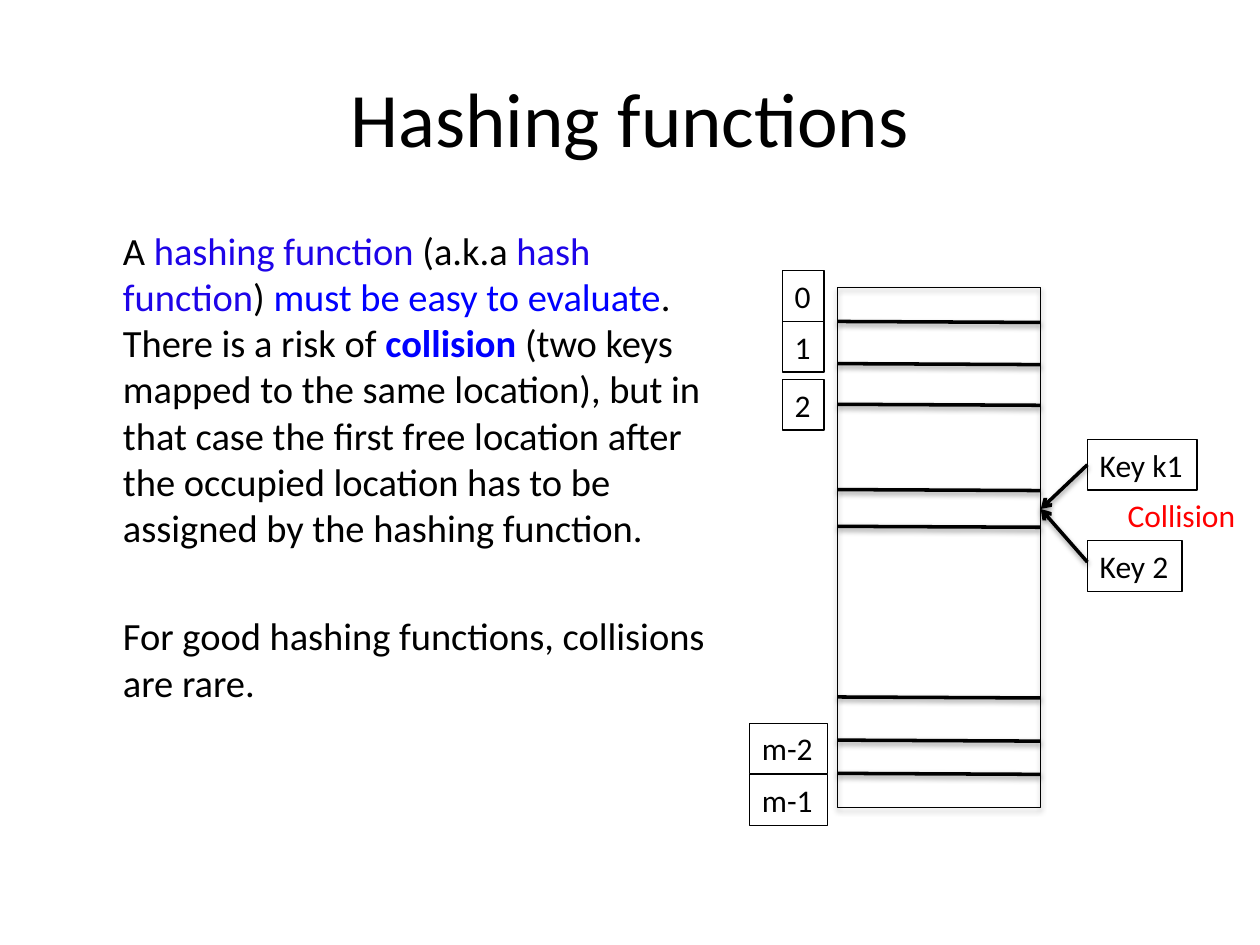
from lxml.etree import SubElement
from pptx import Presentation
from pptx.dml.color import RGBColor
from pptx.enum.shapes import MSO_CONNECTOR, MSO_SHAPE
from pptx.enum.text import MSO_ANCHOR, MSO_AUTO_SIZE, PP_ALIGN
from pptx.oxml.ns import qn
from pptx.util import Cm, Pt

BLACK = RGBColor(0x00, 0x00, 0x00)
VIOLET = RGBColor(0x1E, 0x04, 0xE8)
BLUE = RGBColor(0x00, 0x00, 0xFF)
RED = RGBColor(0xFF, 0x00, 0x00)


def add_run(paragraph, text, size, color=BLACK, bold=False):
    run = paragraph.add_run()
    run.text = text
    run.font.name = "Calibri"
    run.font.size = Pt(size)
    run.font.bold = bold
    run.font.color.rgb = color


def add_shadow(properties, opacity, distance):
    effects = properties.find(qn("a:effectLst"))
    if effects is None:
        effects = SubElement(properties, qn("a:effectLst"))
    shadow = SubElement(effects, qn("a:outerShdw"), blurRad=str(Pt(3.1)),
                        dist=str(Pt(distance)), dir="5400000", rotWithShape="0")
    color = SubElement(shadow, qn("a:srgbClr"), val=str(BLACK))
    SubElement(color, qn("a:alpha"), val=str(opacity * 1000))


prs = Presentation()
prs.slide_width = Cm(25.4)
prs.slide_height = Cm(19.05)
slide = prs.slides.add_slide(prs.slide_layouts[6])

title = slide.shapes.add_textbox(Cm(1.27), Cm(0.76), Cm(22.86), Cm(3.18))
title.text_frame.word_wrap = True
title.text_frame.vertical_anchor = MSO_ANCHOR.MIDDLE
title.text_frame.paragraphs[0].alignment = PP_ALIGN.CENTER
add_run(title.text_frame.paragraphs[0], "Hashing functions", 44)

explanation = slide.shapes.add_textbox(Cm(2.23), Cm(4.45), Cm(12.3), Cm(12.19))
explanation.text_frame.word_wrap = True
risk = explanation.text_frame.paragraphs[0]
for text, color, bold in [
    ("A ", BLACK, False),
    ("hashing function ", VIOLET, False),
    ("(a.k.a ", BLACK, False),
    ("hash function", VIOLET, False),
    (") ", BLACK, False),
    ("must be easy to evaluate", BLUE, False),
    (". There is a risk of ", BLACK, False),
    ("collision", BLUE, True),
    (" (two keys mapped to the same location), but in that case the first free "
     "location after the occupied location has to be assigned by the hashing "
     "function.", BLACK, False),
]:
    add_run(risk, text, 22, color, bold)
rarity = explanation.text_frame.add_paragraph()
rarity.space_before = Pt(35.6)
add_run(rarity, "For good hashing functions, collisions are rare.", 22)

table_left, table_right = 16.89, 20.98
hash_table = slide.shapes.add_shape(
    MSO_SHAPE.RECTANGLE, Cm(table_left), Cm(5.79), Cm(table_right - table_left), Cm(10.49))
hash_table.shadow.inherit = False
hash_table.fill.background()
hash_table.line.color.rgb = BLACK
hash_table.line.width = Pt(0.75)
add_shadow(hash_table.element.spPr, 35, 1.8)

dividers = [(table_left, y, table_right, y + 0.02, False)
            for y in (6.48, 7.33, 8.15, 9.87, 10.61, 14.05, 14.92, 15.59)]
key_arrows = [(21.92, y, table_right, 10.26, True) for y in (9.37, 11.33)]
for x1, y1, x2, y2, has_arrow in dividers + key_arrows:
    stroke = slide.shapes.add_connector(
        MSO_CONNECTOR.STRAIGHT, Cm(x1), Cm(y1), Cm(x2), Cm(y2))
    stroke.line.color.rgb = BLACK
    stroke.line.width = Pt(2)
    if has_arrow:
        SubElement(stroke.line._get_or_add_ln(), qn("a:tailEnd"), type="arrow")
    add_shadow(stroke.element.spPr, 38, 1.6)

for text, left, top, width, color, framed in [
    ("0", 15.77, 5.46, 0.84, BLACK, True),
    ("1", 15.77, 6.48, 0.84, BLACK, True),
    ("2", 15.77, 7.65, 0.84, BLACK, True),
    ("m-2", 15.11, 14.58, 1.57, BLACK, True),
    ("m-1", 15.11, 15.62, 1.57, BLACK, True),
    ("Key k1", 21.92, 8.86, 2.21, BLACK, True),
    ("Key 2", 21.92, 10.9, 1.91, BLACK, True),
    ("Collision", 22.48, 9.88, 2.72, RED, False),
]:
    label = slide.shapes.add_textbox(Cm(left), Cm(top), Cm(width), Cm(1.02))
    label.text_frame.word_wrap = False
    label.text_frame.auto_size = MSO_AUTO_SIZE.SHAPE_TO_FIT_TEXT
    add_run(label.text_frame.paragraphs[0], text, 18, color)
    if framed:
        label.line.color.rgb = BLACK
        label.line.width = Pt(0.75)

prs.save("out.pptx")
